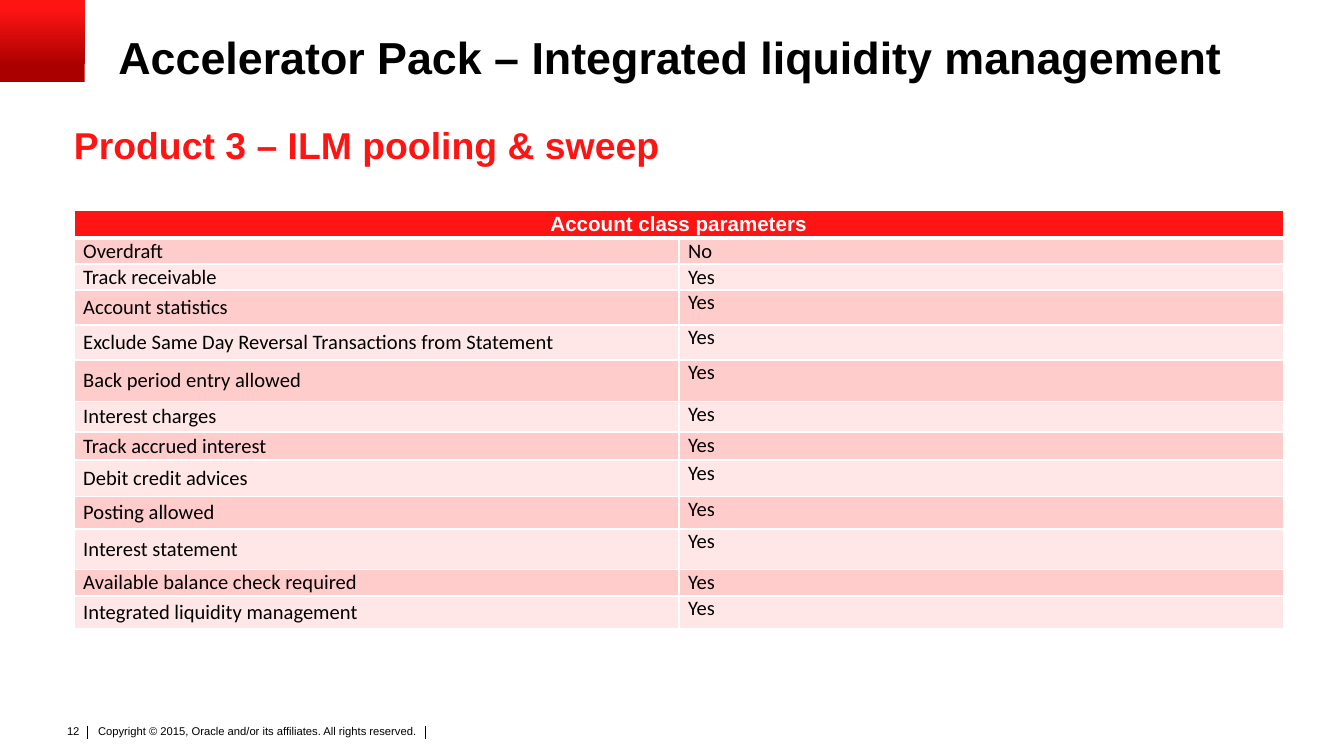
"""Builds the slide on account class parameters for ILM pooling and sweep."""
import pptx
import pptx.dml.color
import pptx.enum.shapes
import pptx.enum.text
import pptx.oxml
import pptx.oxml.ns
import pptx.util
from dataclasses import dataclass

Pt = pptx.util.Pt
RGB = pptx.dml.color.RGBColor.from_string
ALIGN = pptx.enum.text.PP_ALIGN
ANCHOR = pptx.enum.text.MSO_ANCHOR


@dataclass(frozen=True)
class Theme:
    red: str = "FF1414"
    dark_red: str = "AA0000"
    bands: tuple = ("FFCCCC", "FFE7E7")
    ink: str = "000000"
    white: str = "FFFFFF"
    heading_font: str = "Arial"
    cell_font: str = "Calibri"
    title: int = 24
    subtitle: int = 20
    cell: int = 11
    footer: int = 6


THEME = Theme()
TITLE = "Accelerator Pack – Integrated liquidity management"
SUBTITLE = "Product 3 – ILM pooling & sweep"
COPYRIGHT = "Copyright © 2015, Oracle and/or its affiliates. All rights reserved."
PAGE = "12"
HEADER = ("Account class parameters", 15)
PARAMETERS = [
    ("Overdraft", "No", 14),
    ("Track receivable", "Yes", 14),
    ("Account statistics", "Yes", 18.7),
    ("Exclude Same Day Reversal Transactions from Statement", "Yes", 18.7),
    ("Back period entry allowed", "Yes", 22.3),
    ("Interest charges", "Yes", 16.5),
    ("Track accrued interest", "Yes", 15),
    ("Debit credit advices", "Yes", 19.4),
    ("Posting allowed", "Yes", 17.3),
    ("Interest statement", "Yes", 21.8),
    ("Available balance check required", "Yes", 14.2),
    ("Integrated liquidity management", "Yes", 17.8),
]
MIDDLE_VALUE_ROWS = 2
LEFT, WIDTH, TABLE_TOP = 39.6, 648, 112.5
DIVIDERS = (46.8, 228)


def write(p, text, size, color, font=THEME.heading_font, bold=False, align=ALIGN.LEFT):
    p.text = text
    p.alignment = align
    p.font.size = Pt(size)
    p.font.name = font
    p.font.bold = bold
    p.font.color.rgb = RGB(color)


def add_text(s, box, text, size, color, insets=(0, 0), wrap=True, spacing=None, **style):
    tf = s.shapes.add_textbox(*map(Pt, box)).text_frame
    tf.word_wrap = wrap
    tf.margin_left = tf.margin_right = Pt(insets[0])
    tf.margin_top = tf.margin_bottom = Pt(insets[1])
    p = tf.paragraphs[0]
    write(p, text, size, color, **style)
    p.line_spacing = spacing


def add_corner(s):
    sp = s.shapes.add_shape(pptx.enum.shapes.MSO_SHAPE.RECTANGLE, 0, 0, Pt(45.4), Pt(44))
    sp.shadow.inherit = False
    sp.line.fill.background()
    sp.fill.gradient()
    sp.fill.gradient_angle = 90
    stops = ((0.2, THEME.dark_red), (0.9, THEME.red))
    for stop, (position, color) in zip(sp.fill.gradient_stops, stops):
        stop.position = position
        stop.color.rgb = RGB(color)


def add_divider(s, x):
    line = s.shapes.add_connector(
        pptx.enum.shapes.MSO_CONNECTOR.STRAIGHT, Pt(x), Pt(388.8), Pt(x), Pt(396))
    line.line.width = Pt(0.5)
    line.line.color.rgb = RGB(THEME.ink)
    line._element.spPr.append(pptx.oxml.parse_xml(
        f"<a:effectLst {pptx.oxml.ns.nsdecls('a')}/>"))


def style_cell(cell, text, fill, color, anchor, top=1, bottom=1, **style):
    cell.fill.solid()
    cell.fill.fore_color.rgb = RGB(fill)
    cell.vertical_anchor = anchor
    cell.margin_left = cell.margin_right = Pt(5)
    cell.margin_top = cell.margin_bottom = 0
    p = cell.text_frame.paragraphs[0]
    write(p, text, THEME.cell, color, **style)
    p.space_after = Pt(10)
    for i, (side, width) in enumerate(zip("LRTB", (1, 1, top, bottom))):
        cell._tc.tcPr.insert(i, pptx.oxml.parse_xml(
            f'<a:ln{side} {pptx.oxml.ns.nsdecls("a")} w="{Pt(width)}"><a:solidFill>'
            f'<a:srgbClr val="{THEME.white}"/></a:solidFill></a:ln{side}>'))


def add_parameters(s):
    heights = [HEADER[1]] + [row[2] for row in PARAMETERS]
    table = s.shapes.add_table(
        len(heights), 2, Pt(LEFT), Pt(TABLE_TOP), Pt(WIDTH), Pt(sum(heights))).table
    table.first_row = table.horz_banding = False
    for row, height in zip(table.rows, heights):
        row.height = Pt(height)
    for column in table.columns:
        column.width = Pt(WIDTH / 2)
    table.cell(0, 0).merge(table.cell(0, 1))
    style_cell(table.cell(0, 0), HEADER[0], THEME.red, THEME.white, ANCHOR.MIDDLE,
               bottom=3, bold=True, align=ALIGN.CENTER)
    for i, (name, value, _) in enumerate(PARAMETERS):
        value_anchor = ANCHOR.MIDDLE if i < MIDDLE_VALUE_ROWS else ANCHOR.TOP
        for j, (text, anchor) in enumerate(((name, ANCHOR.MIDDLE), (value, value_anchor))):
            style_cell(table.cell(i + 1, j), text, THEME.bands[i % 2], THEME.ink, anchor,
                       top=1 if i else 3, font=THEME.cell_font)


def main():
    prs = pptx.Presentation()
    prs.slide_width, prs.slide_height = Pt(720), Pt(405)
    s = prs.slides.add_slide(prs.slide_layouts[6])
    add_text(s, (49.7, 386.6, 197.3, 17.3), COPYRIGHT, THEME.footer, THEME.ink, (2.9, 1.4))
    for x in DIVIDERS:
        add_divider(s, x)
    add_text(s, (28.1, 384.5, 21.6, 14.4), PAGE, THEME.footer, THEME.ink, (7.2, 3.6),
             wrap=False, align=ALIGN.RIGHT)
    add_corner(s)
    add_text(s, (63.4, 19.4, WIDTH, 31.7), TITLE, THEME.title, THEME.ink,
             spacing=0.9, bold=True)
    add_parameters(s)
    add_text(s, (LEFT, 65.5, WIDTH, 23.8), SUBTITLE, THEME.subtitle, THEME.red, bold=True)
    prs.save("out.pptx")


if __name__ == "__main__":
    main()
